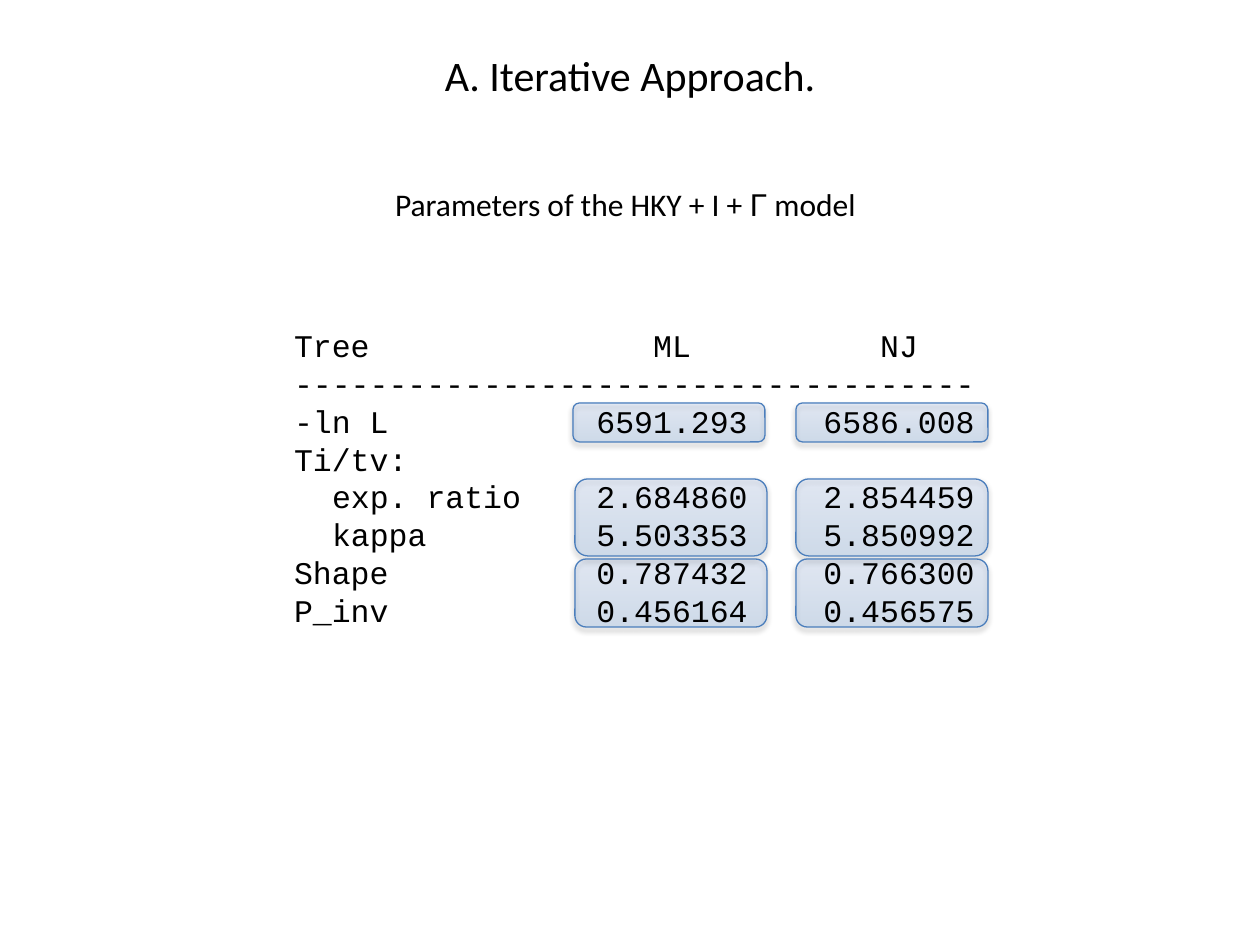
from lxml import etree
from pptx import Presentation
from pptx.dml.color import RGBColor
from pptx.enum.shapes import MSO_SHAPE
from pptx.enum.text import MSO_ANCHOR, MSO_AUTO_SIZE, PP_ALIGN
from pptx.oxml.ns import qn
from pptx.util import Pt

ROUNDED = MSO_SHAPE.ROUNDED_RECTANGLE
TOP = MSO_ANCHOR.TOP
NO_FIT = MSO_AUTO_SIZE.NONE
LEFT, CENTER = PP_ALIGN.LEFT, PP_ALIGN.CENTER

EMU_PER_PX = 914400 / 126
COLORS = {
    "text": "000000",
    "fill_start": "3F80CE",
    "fill_end": "A4C4FF",
    "outline": "4B7EBC",
    "shadow": "000000",
}
FRAME_FORMAT = {
    "vertical_anchor": TOP,
    "margin_top": Pt(3.6),
    "margin_bottom": Pt(3.6),
    "margin_right": Pt(7.2),
}
PARA_FORMAT = {"space_before": Pt(0), "space_after": Pt(0), "line_spacing": 1.0}
TAB_STOPS = [(38, "l"), (378, "ctr"), (605, "ctr")]
LISTING = [
    "Tree\tML\tNJ",
    "-" * 36,
    "-ln L\t6591.293\t6586.008",
    "Ti/tv:",
    "\texp. ratio\t2.684860\t2.854459",
    "\tkappa\t5.503353\t5.850992",
    "Shape\t0.787432\t0.766300",
    "P_inv\t0.456164\t0.456575",
]
HIGHLIGHT_WIDTH = 192
HIGHLIGHT_ROWS = [
    (83, 39, (695, 472)),
    (159, 77, (695, 474)),
    (239, 68, (695, 474)),
]


def px(length):
    return round(length * EMU_PER_PX)


def color(name):
    return RGBColor.from_string(COLORS[name])


def apply(target, values):
    for name, value in values.items():
        setattr(target, name, value)


def place(shape, box):
    apply(shape, dict(zip(("left", "top", "width", "height"), map(px, box))))


def prepare_frame(shape, wrap, inset=13):
    frame = shape.text_frame
    apply(frame, FRAME_FORMAT)
    apply(frame, {"word_wrap": wrap, "auto_size": NO_FIT, "margin_left": px(inset)})
    return frame


def add_span(para, text, font, size):
    span = para.add_run()
    span.text = text
    apply(span.font, {"name": font, "size": Pt(size)})
    span.font.color.rgb = color("text")


def write_title(title, box):
    place(title, box)
    para = prepare_frame(title, False).paragraphs[0]
    para.alignment = CENTER
    add_span(para, "A. Iterative Approach.", "Calibri", 24)


def write_caption(body, box):
    place(body, box)
    para = prepare_frame(body, True).paragraphs[0]
    apply(para, PARA_FORMAT)
    para.alignment = LEFT
    properties = para._p.get_or_add_pPr()
    properties.set("marL", "0")
    properties.set("indent", "0")
    etree.SubElement(properties, qn("a:buNone"))
    for text, font in (
        ("Parameters of the HKY + I + ", "Calibri"),
        ("Γ", "Arial"),
        (" model", "Calibri"),
    ):
        add_span(para, text, font, 18)


def set_tabs(para):
    tabs = etree.SubElement(para._p.get_or_add_pPr(), qn("a:tabLst"))
    for position, alignment in TAB_STOPS:
        etree.SubElement(tabs, qn("a:tab"), pos=str(px(position)), algn=alignment)


def add_listing(page, box):
    listing = page.shapes.add_textbox(*map(px, box))
    frame = prepare_frame(listing, True, 193)
    for index, line in enumerate(LISTING):
        para = frame.add_paragraph() if index else frame.paragraphs[0]
        set_tabs(para)
        add_span(para, line, "Courier New", 18)


def add_shadow(shape):
    effects = etree.SubElement(shape._element.spPr, qn("a:effectLst"))
    shadow = etree.SubElement(
        effects, qn("a:outerShdw"), blurRad=str(Pt(3.1)), dist=str(Pt(1.8)),
        dir="5400000", rotWithShape="0",
    )
    tint = etree.SubElement(shadow, qn("a:srgbClr"), val=COLORS["shadow"])
    etree.SubElement(tint, qn("a:alpha"), val="35000")


def add_highlight(group, box):
    shape = group.shapes.add_shape(ROUNDED, *map(px, box))
    shape.fill.gradient()
    shape.fill.gradient_angle = 90
    for stop, name in zip(shape.fill.gradient_stops, ("fill_start", "fill_end")):
        stop.color.rgb = color(name)
    for tint in shape._element.spPr.iter(qn("a:srgbClr")):
        etree.SubElement(tint, qn("a:alpha"), val="18000")
    shape.line.color.rgb = color("outline")
    shape.line.width = Pt(0.75)
    add_shadow(shape)


def add_highlights(page, box):
    left, top = box[:2]
    for offset, height, columns in HIGHLIGHT_ROWS:
        group = page.shapes.add_group_shape()
        for column in columns:
            add_highlight(group, (left + column, top + offset, HIGHLIGHT_WIDTH, height))


def build_page(deck):
    page = deck.slides.add_slide(deck.slide_layouts[1])
    title, body = page.placeholders
    listing_box = (101, 320, 915, 318)
    write_title(title, (429, 43, 402, 63))
    write_caption(body, (382, 179, 494, 50))
    add_highlights(page, listing_box)
    add_listing(page, listing_box)


def main():
    deck = Presentation()
    deck.slide_width, deck.slide_height = px(1260), px(945)
    build_page(deck)
    deck.save("out.pptx")


if __name__ == "__main__":
    main()
